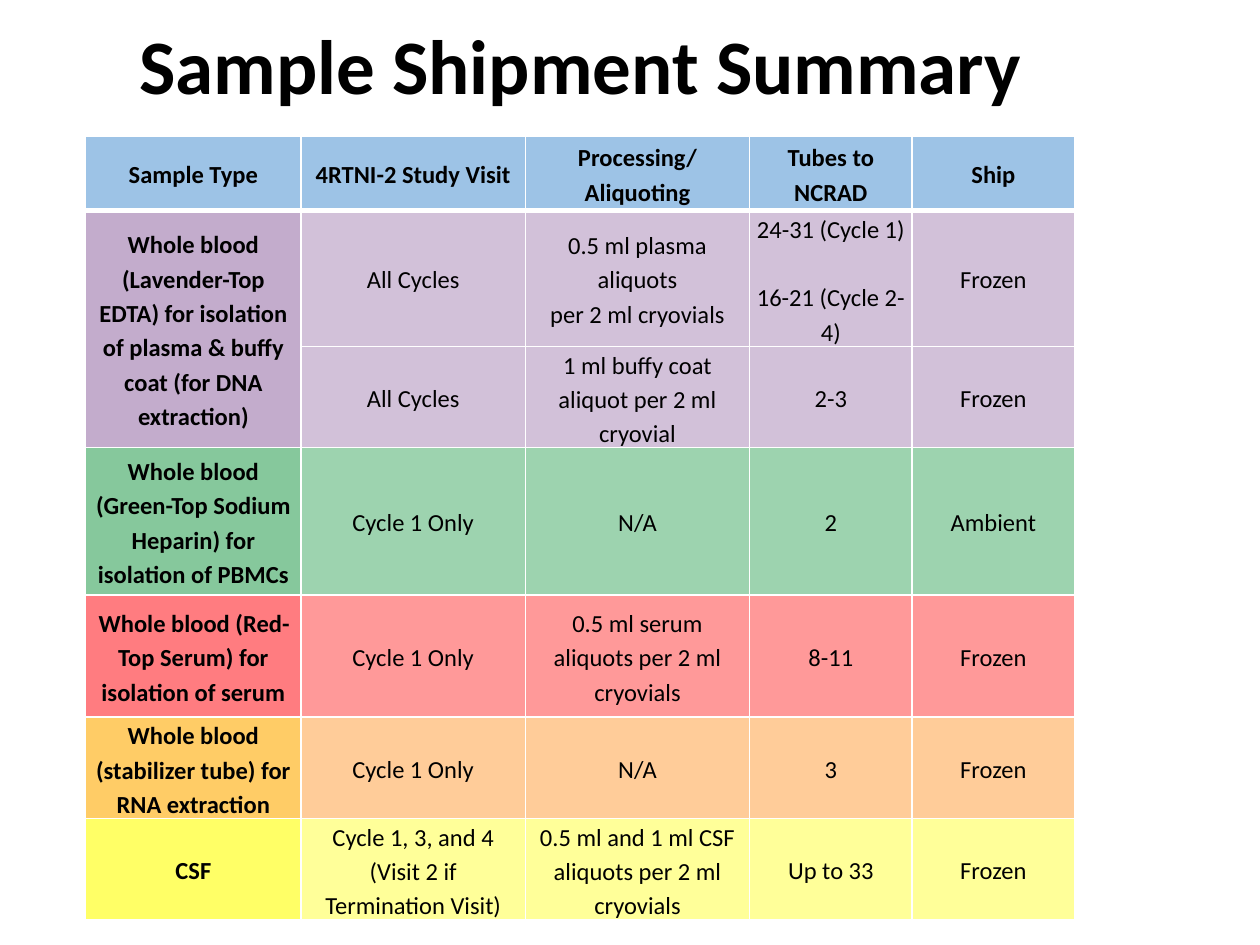
import pptx
import pptx.util
import pptx.enum.text
import pptx.dml.color
import lxml.etree

Inches, Pt = pptx.util.Inches, pptx.util.Pt
RGB = pptx.dml.color.RGBColor.from_string
ALIGN = pptx.enum.text.PP_ALIGN
MID = pptx.enum.text.MSO_ANCHOR.MIDDLE

TITLE = "Sample Shipment Summary"
HEAD = ["Sample Type", "4RTNI-2 Study Visit", "Processing/ Aliquoting",
        "Tubes to NCRAD", "Ship"]
GROUPS = [
    ("Whole blood (Lavender-Top EDTA) for isolation of plasma & buffy coat "
     "(for DNA extraction)", "lilac", [
        ["All Cycles", "0.5 ml plasma aliquots\vper 2 ml cryovials",
         ["24-31 (Cycle 1)", "16-21 (Cycle 2-4)"], "Frozen"],
        ["All Cycles", "1 ml buffy coat aliquot per 2 ml cryovial",
         "2-3", "Frozen"]]),
    ("Whole blood (Green-Top Sodium Heparin) for isolation of PBMCs",
     "green", [["Cycle 1 Only", "N/A", "2", "Ambient"]]),
    ("Whole blood (Red-Top Serum) for isolation of serum", "red", [
        ["Cycle 1 Only", "0.5 ml serum aliquots per 2 ml cryovials",
         "8-11", "Frozen"]]),
    ("Whole blood (stabilizer tube) for RNA extraction", "gold", [
        ["Cycle 1 Only", "N/A", "3", "Frozen"]]),
    ("CSF", "yellow", [
        [["Cycle 1, 3, and 4", "(Visit 2 if Termination Visit)"],
         "0.5 ml and 1 ml CSF aliquots per 2 ml cryovials",
         "Up to 33", "Frozen"]]),
]
THEME = {
    "font": "Calibri", "ink": "000000", "line": "FFFFFF",
    "title": 44, "body": 14, "thin": 1, "thick": 3, "gap": 19.7,
    "head": "9DC3E6",
    "lilac": ("C3ACCC", "D2C1D9"), "green": ("86C89C", "9DD3AF"),
    "red": ("FF7C80", "FF9999"), "gold": ("FFCC66", "FFCC99"),
    "yellow": ("FFFF66", "FFFF99"),
}
COLS = [1.71, 1.78, 1.78, 1.29, 1.29]
ROWS = [0.59, 1.07, 0.66, 1.17, 0.97, 0.66, 0.78]
LEFT, TOP = 0.68, 1.08


def write(frame, text, size, bold=False, lead=1.15, gap=0):
    lines = text if isinstance(text, list) else [text]
    for i, line in enumerate(lines):
        para = frame.add_paragraph() if i else frame.paragraphs[0]
        para.text = line
        para.alignment = ALIGN.CENTER
        para.line_spacing = lead
        if i and gap:
            para.space_before = Pt(gap)
        for run in para.runs:
            run.font.name = THEME["font"]
            run.font.size = Pt(size)
            run.font.bold = bold
            run.font.color.rgb = RGB(THEME["ink"])


def border(cell, **widths):
    props = cell._tc.get_or_add_tcPr()
    ns = "{http://schemas.openxmlformats.org/drawingml/2006/main}"
    for side in "LRTB":
        width = widths.get(side, THEME["thin"])
        line = lxml.etree.SubElement(props, ns + "ln" + side, w=str(Pt(width)))
        fill = lxml.etree.SubElement(line, ns + "solidFill")
        lxml.etree.SubElement(fill, ns + "srgbClr", val=THEME["line"])


def paint(cell, text, fill, bold=False, gap=0, **widths):
    border(cell, **widths)
    cell.fill.solid()
    cell.fill.fore_color.rgb = RGB(fill)
    cell.vertical_anchor = MID
    cell.margin_left = cell.margin_right = Inches(0.05)
    cell.margin_top = cell.margin_bottom = 0
    write(cell.text_frame, text, THEME["body"], bold=bold, gap=gap)


def main():
    deck = pptx.Presentation()
    deck.slide_width, deck.slide_height = Inches(10), Inches(7.5)
    slide = deck.slides.add_slide(deck.slide_layouts[6])

    box = slide.shapes.add_textbox(
        Inches(0.3), Inches(-0.17), Inches(8.62), Inches(1.45))
    box.text_frame.word_wrap = True
    box.text_frame.vertical_anchor = MID
    write(box.text_frame, TITLE, THEME["title"], bold=True, lead=0.9)

    grid = slide.shapes.add_table(
        len(ROWS), len(COLS), Inches(LEFT), Inches(TOP),
        Inches(sum(COLS)), Inches(sum(ROWS))).table
    grid.first_row = grid.horz_banding = False
    for col, width in zip(grid.columns, COLS):
        col.width = Inches(width)
    for row, height in zip(grid.rows, ROWS):
        row.height = Inches(height)

    for c, text in enumerate(HEAD):
        paint(grid.cell(0, c), text, THEME["head"], bold=True,
              B=THEME["thick"])
    r = 1
    for name, tint, visits in GROUPS:
        dark, light = THEME[tint]
        for i, visit in enumerate(visits):
            top = THEME["thick" if r + i == 1 else "thin"]
            paint(grid.cell(r + i, 0), "" if i else name, dark, bold=True,
                  T=top)
            for c, text in enumerate(visit, 1):
                gap = THEME["gap"] if HEAD[c] == "Tubes to NCRAD" else 0
                paint(grid.cell(r + i, c), text, light, gap=gap, T=top)
        if len(visits) > 1:
            grid.cell(r, 0).merge(grid.cell(r + len(visits) - 1, 0))
        r += len(visits)

    deck.save("out.pptx")


if __name__ == "__main__":
    main()
